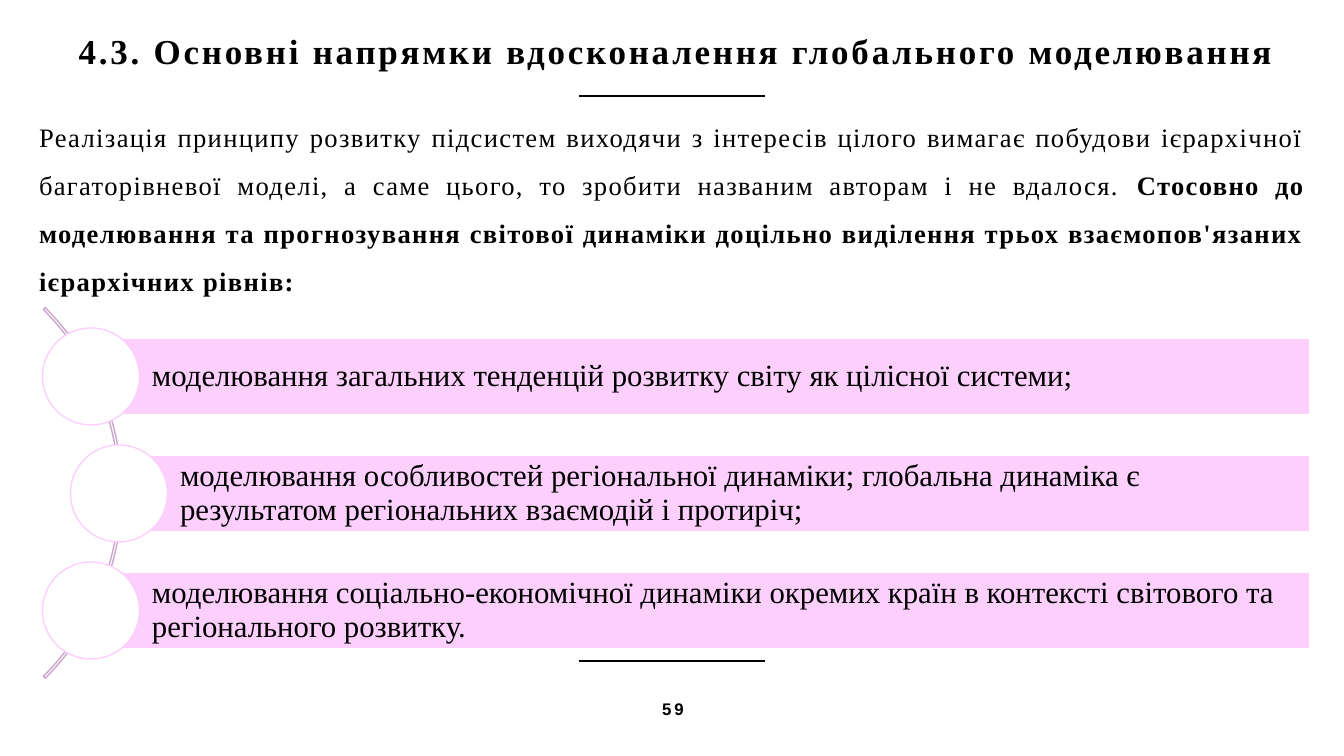
from pptx import Presentation
from pptx.dml.color import RGBColor
from pptx.enum.shapes import MSO_CONNECTOR, MSO_SHAPE
from pptx.enum.text import MSO_ANCHOR, PP_ALIGN
from pptx.oxml.ns import qn
from pptx.util import Emu, Pt
from lxml import etree

LINE = MSO_CONNECTOR.STRAIGHT
RECTANGLE, OVAL, ARC = MSO_SHAPE.RECTANGLE, MSO_SHAPE.OVAL, MSO_SHAPE.BLOCK_ARC
MIDDLE, TOP = MSO_ANCHOR.MIDDLE, MSO_ANCHOR.TOP
LEFT, CENTER, JUSTIFY = PP_ALIGN.LEFT, PP_ALIGN.CENTER, PP_ALIGN.JUSTIFY

PAGE_WIDTH, PAGE_HEIGHT = 1344, 756
EMU_PER_PX = 12192000 / PAGE_WIDTH
TITLE_ONLY = 5
COLORS = {"ink": "000000", "paper": "FFFFFF", "pink": "FDCFFD", "mauve": "CBA6CB"}
SERIF, SANS = "Times New Roman", "Arial"

TITLE = "4.3. Основні напрямки вдосконалення глобального моделювання"
INTRO = (
    "Реалізація принципу розвитку підсистем виходячи з інтересів цілого вимагає "
    "побудови ієрархічної багаторівневої моделі, а саме цього, то зробити названим "
    "авторам і не вдалося. "
)
INTRO_BOLD = (
    "Стосовно до моделювання та прогнозування світової динаміки доцільно виділення "
    "трьох взаємопов'язаних ієрархічних рівнів:"
)
LEVELS = [
    (91, "моделювання загальних тенденцій розвитку світу як цілісної системи;"),
    (119, "моделювання особливостей регіональної динаміки; глобальна динаміка є "
          "результатом регіональних взаємодій і протиріч;"),
    (91, "моделювання соціально-економічної динаміки окремих країн в контексті "
         "світового та регіонального розвитку."),
]
LEVEL_TOP, LEVEL_STEP, LEVEL_HEIGHT, LEVEL_RIGHT = 338, 117, 77, 1310
CIRCLE = 97


def px(length):
    return Emu(round(length * EMU_PER_PX))


def color(name):
    return RGBColor.from_string(COLORS[name])


class Page:
    def __init__(self, deck):
        self.slide = deck.slides.add_slide(deck.slide_layouts[TITLE_ONLY])
        self.shapes = self.slide.shapes

    def set_text(self, box, spans, size, font=SERIF, align=LEFT, anchor=MIDDLE,
                 spacing=1.0, tracking=0, insets=(10, 5, 10, 5)):
        """Fill one paragraph with (text, bold) spans; tracking is in points."""
        frame = box.text_frame
        frame.word_wrap = True
        frame.vertical_anchor = anchor
        (frame.margin_left, frame.margin_top,
         frame.margin_right, frame.margin_bottom) = map(px, insets)
        para = frame.paragraphs[0]
        para.alignment = align
        para.line_spacing = spacing
        para.font.name = font
        para.font.size = Pt(size)
        para.font.color.rgb = color("ink")
        for text, bold in spans:
            span = para.add_run()
            span.text = text
            span.font.bold = bold
            if tracking:
                span.font._element.set("spc", str(tracking * 100))

    def title(self, text, left, top, width, height, **style):
        box = self.shapes.title
        box.left, box.top, box.width, box.height = map(px, (left, top, width, height))
        self.set_text(box, [(text, True)], **style)

    def text(self, spans, left, top, width, height, **style):
        box = self.shapes.add_textbox(*map(px, (left, top, width, height)))
        self.set_text(box, spans, **style)

    def rule(self, left, right, y):
        line = self.shapes.add_connector(LINE, px(left), px(y), px(right), px(y))
        line.line.color.rgb = color("ink")
        line.line.width = Pt(1)
        etree.SubElement(line._element.spPr, qn("a:effectLst"))

    def shape(self, kind, left, top, width, height, outline, fill=None):
        shape = self.shapes.add_shape(kind, *map(px, (left, top, width, height)))
        shape.shadow.inherit = False
        shape.line.color.rgb = color(outline)
        shape.line.width = Pt(1)
        if fill:
            shape.fill.solid()
            shape.fill.fore_color.rgb = color(fill)
        else:
            shape.fill.background()
        return shape

    def level(self, left, top, text):
        """Draw a bar with its text and the circle centred on its left edge."""
        bar = self.shape(RECTANGLE, left, top, LEVEL_RIGHT - left, LEVEL_HEIGHT,
                         "paper", "pink")
        self.set_text(bar, [(text, False)], size=22, spacing=0.9, insets=(61, 6, 6, 6))
        self.shape(OVAL, left - CIRCLE / 2, top + (LEVEL_HEIGHT - CIRCLE) / 2,
                   CIRCLE, CIRCLE, "pink", "paper")


def main():
    deck = Presentation()
    deck.slide_width, deck.slide_height = px(PAGE_WIDTH), px(PAGE_HEIGHT)
    page = Page(deck)
    for y in (96, 661):
        page.rule(579, 765, y)
    page.title(TITLE, 37, 0, 1278, 100, size=25, align=CENTER, tracking=2)
    page.text([(INTRO, False), (INTRO_BOLD, True)], 29, 100, 1286, 210, size=19,
              align=JUSTIFY, anchor=TOP, spacing=1.5, tracking=1)
    page.text([("59", True)], 446, 662, 454, 94, size=12, font=SANS,
              align=CENTER, tracking=2)

    arc = page.shape(ARC, -402, 231, 524, 524, "mauve")
    for index, value in enumerate((189, 27, 0.005)):
        arc.adjustments[index] = value
    for row, (left, text) in enumerate(LEVELS):
        page.level(left, LEVEL_TOP + row * LEVEL_STEP, text)
    deck.save("out.pptx")


if __name__ == "__main__":
    main()
